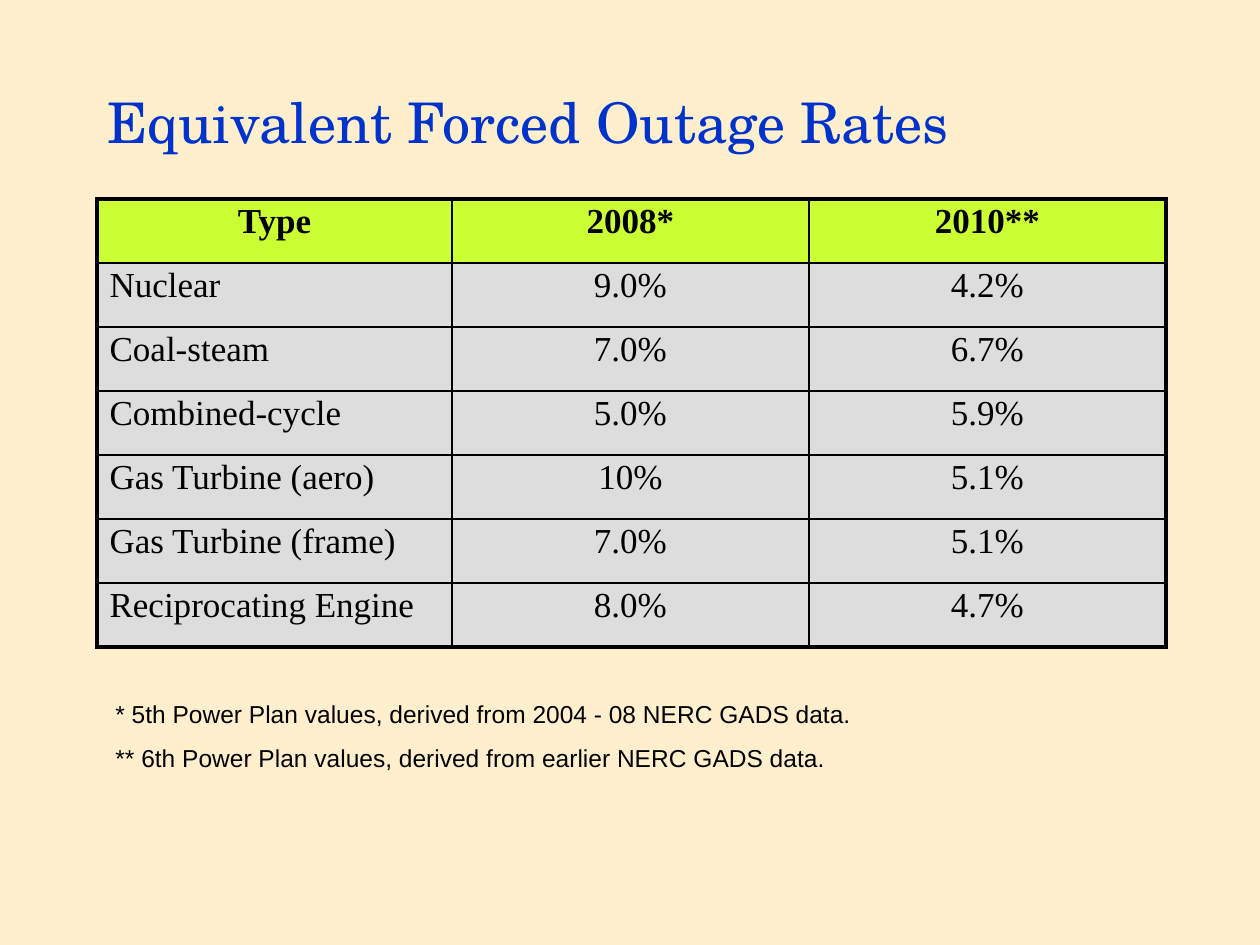
import pptx
import pptx.dml.color
import pptx.enum.text
import pptx.oxml
import pptx.oxml.ns
import pptx.util

PX = 914400 / 126
COLORS = {
    "cream": "FFEFCC",
    "blue": "0033CC",
    "black": "000000",
    "lime": "CCFF33",
    "gray": "DDDDDD",
}
ALIGN = pptx.enum.text.PP_ALIGN
ANCHOR = pptx.enum.text.MSO_ANCHOR
THIN, THICK = 1, 2.25

TITLE_FONT = {"name": "TeX Gyre Schola", "size": pptx.util.Pt(32)}
TABLE_FONT = {"name": "Times New Roman", "size": pptx.util.Pt(20)}
NOTE_FONT = {"name": "Arial", "size": pptx.util.Pt(14)}

OUTAGE_RATES = [
    ("Type", "2008*", "2010**"),
    ("Nuclear", "9.0%", "4.2%"),
    ("Coal-steam", "7.0%", "6.7%"),
    ("Combined-cycle", "5.0%", "5.9%"),
    ("Gas Turbine (aero)", "10%", "5.1%"),
    ("Gas Turbine (frame)", "7.0%", "5.1%"),
    ("Reciprocating Engine", "8.0%", "4.7%"),
]
FOOTNOTES = [
    "* 5th Power Plan values, derived from 2004 - 08 NERC GADS data.",
    "** 6th Power Plan values, derived from earlier NERC GADS data.",
]


def emu(*lengths):
    return [pptx.util.Emu(round(length * PX)) for length in lengths]


def rgb(name):
    return pptx.dml.color.RGBColor.from_string(COLORS[name])


def apply_format(target, values):
    for name, value in values.items():
        setattr(target, name, value)


class SlideBuilder:
    def __init__(self, slide, background):
        self.slide = slide
        slide.background.fill.solid()
        slide.background.fill.fore_color.rgb = rgb(background)

    def fill_paragraph(self, para, text, font, color, layout):
        apply_format(para, layout)
        span = para.add_run()
        span.text = text
        apply_format(span.font, font)
        span.font.color.rgb = rgb(color)

    def text_box(self, bounds, lines, font, color, frame_format, gap=0):
        """Add a text box with one paragraph a line, gap points apart."""
        frame = self.slide.shapes.add_textbox(*emu(*bounds)).text_frame
        apply_format(frame, {"word_wrap": True, **frame_format})
        for index, line in enumerate(lines):
            para = frame.add_paragraph() if index else frame.paragraphs[0]
            layout = {"space_before": pptx.util.Pt(gap)} if index else {}
            self.fill_paragraph(para, line, font, color, layout)

    def borders(self, cell, widths):
        """Draw the cell's sides; they must come before its fill."""
        properties = cell._tc.get_or_add_tcPr()
        for index, (side, width) in enumerate(widths.items()):
            line = pptx.oxml.parse_xml(
                f'<a:ln{side} {pptx.oxml.ns.nsdecls("a")} w="{pptx.util.Pt(width)}">'
                f'<a:solidFill><a:srgbClr val="{COLORS["black"]}"/></a:solidFill>'
                f"</a:ln{side}>"
            )
            properties.insert(index, line)

    def table(self, left, top, column_widths, row_height, rows):
        bounds = emu(left, top, sum(column_widths), row_height * len(rows))
        table = self.slide.shapes.add_table(len(rows), len(column_widths), *bounds).table
        apply_format(table, {"first_row": False, "horz_banding": False})
        for column, width in zip(table.columns, emu(*column_widths)):
            column.width = width
        last_row, last_column = len(rows) - 1, len(column_widths) - 1
        for r, values in enumerate(rows):
            table.rows[r].height = emu(row_height)[0]
            for c, value in enumerate(values):
                cell = table.cell(r, c)
                centred = r == 0 or c > 0
                layout = {
                    "alignment": ALIGN.CENTER if centred else ALIGN.LEFT,
                    "line_spacing": 0.9,
                }
                font = {**TABLE_FONT, "bold": r == 0}
                para = cell.text_frame.paragraphs[0]
                self.fill_paragraph(para, value, font, "black", layout)
                cell.fill.solid()
                cell.fill.fore_color.rgb = rgb("gray" if r else "lime")
                self.borders(cell, {
                    "L": THIN if c else THICK,
                    "R": THICK if c == last_column else THIN,
                    "T": THIN if r else THICK,
                    "B": THICK if r == last_row else THIN,
                })


def main():
    deck = pptx.Presentation()
    deck.slide_width, deck.slide_height = emu(1260, 945)
    builder = SlideBuilder(deck.slides.add_slide(deck.slide_layouts[6]), "cream")
    builder.text_box((95, 53, 1071, 136), ["Equivalent Forced Outage Rates"],
                     TITLE_FONT, "blue", {"vertical_anchor": ANCHOR.MIDDLE})
    builder.table(97, 199, (355, 357, 357), 64, OUTAGE_RATES)
    builder.text_box((103, 693, 1062, 130), FOOTNOTES, NOTE_FONT, "black",
                     {"vertical_anchor": ANCHOR.TOP}, gap=8)
    deck.save("out.pptx")


if __name__ == "__main__":
    main()
